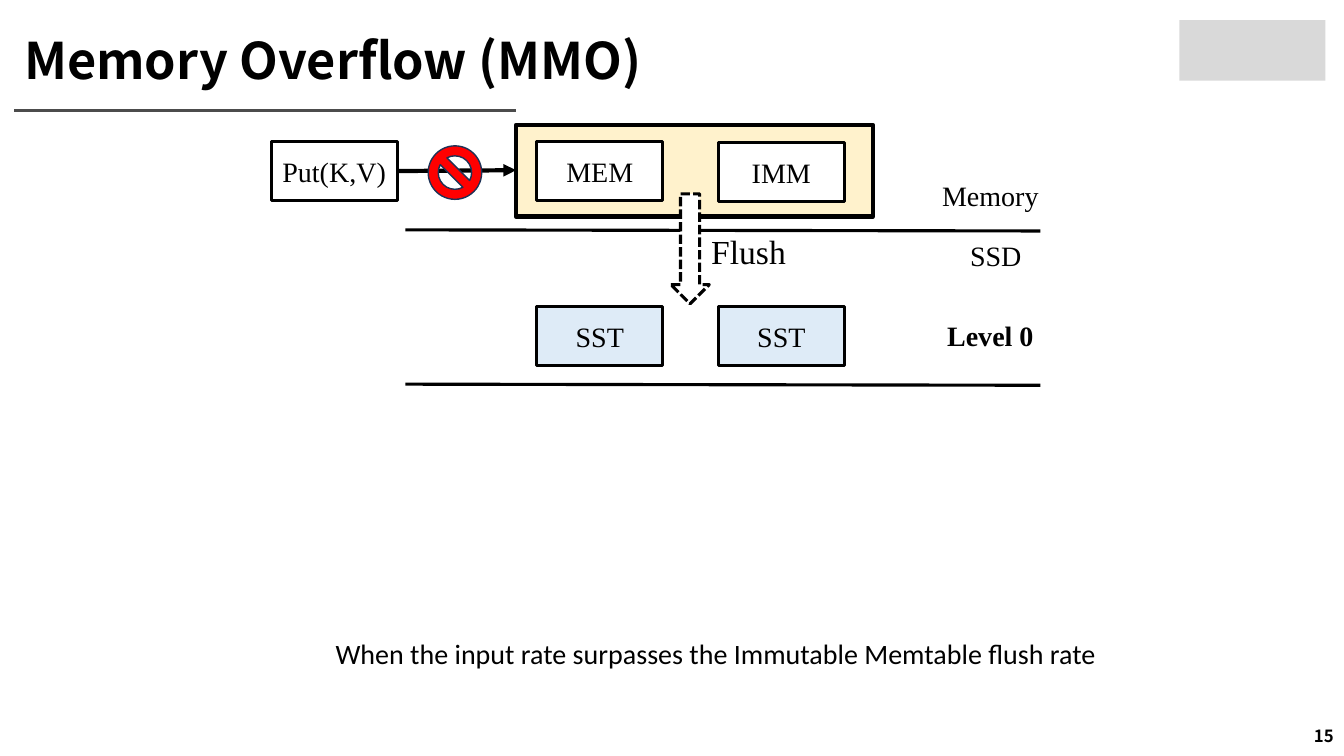
from dataclasses import dataclass

from pptx import Presentation
from pptx.dml.color import RGBColor
from pptx.enum import dml, shapes, text
from pptx.oxml import ns, xmlchemy
from pptx.util import Pt


@dataclass(frozen=True)
class Theme:
    ink: str = "000000"
    paper: str = "FFFFFF"
    rule: str = "4C4C4C"
    memory: str = "FFF2CC"
    sst: str = "DEEBF7"
    stop: str = "FF0000"
    stop_edge: str = "1E3256"
    badge: str = "D9D9D9"
    heading: str = "Noto Sans CJK KR"
    diagram: str = "Times New Roman"
    body: str = "Calibri"
    title_size: float = 36
    flush_size: float = 24
    label_size: float = 20
    number_size: float = 12


T = Theme()
SHAPE = shapes.MSO_SHAPE
LEFT, CENTER, RIGHT = text.PP_ALIGN.LEFT, text.PP_ALIGN.CENTER, text.PP_ALIGN.RIGHT
TOP, MIDDLE = text.MSO_ANCHOR.TOP, text.MSO_ANCHOR.MIDDLE
BOX_W, BOX_H = 90, 42.5
COLUMNS = (189.7, 319.4)


def write(tf, words, size, font, align, anchor, bold=False):
    tf.word_wrap = True
    tf.vertical_anchor = anchor
    p = tf.paragraphs[0]
    p.alignment = align
    r = p.add_run()
    r.text = words
    r.font.size = Pt(size)
    r.font.name = font
    r.font.bold = bold
    r.font.color.rgb = RGBColor.from_string(T.ink)
    rpr = r.font._element
    ea = xmlchemy.OxmlElement("a:ea")
    ea.set("typeface", font)
    rpr.find(ns.qn("a:latin")).addnext(ea)
    return p


def add_label(s, x, y, w, h, words, size=T.label_size, font=T.diagram,
              align=CENTER, anchor=TOP, bold=False):
    sp = s.shapes.add_textbox(Pt(x), Pt(y), Pt(w), Pt(h))
    return write(sp.text_frame, words, size, font, align, anchor, bold)


def add_block(s, kind, x, y, w, h, fill, edge=None, weight=2.25):
    sp = s.shapes.add_shape(kind, Pt(x), Pt(y), Pt(w), Pt(h))
    sp.shadow.inherit = False
    sp.fill.solid()
    sp.fill.fore_color.rgb = RGBColor.from_string(fill)
    if edge:
        sp.line.color.rgb = RGBColor.from_string(edge)
        sp.line.width = Pt(weight)
    else:
        sp.line.fill.background()
    return sp


def add_node(s, x, y, words, fill):
    sp = add_block(s, SHAPE.RECTANGLE, x, y, BOX_W, BOX_H, fill, T.ink)
    write(sp.text_frame, words, T.label_size, T.diagram, CENTER, MIDDLE)


def add_line(s, x1, y1, x2, y2, color=T.ink, weight=2.25, arrow=False):
    c = s.shapes.add_connector(shapes.MSO_CONNECTOR.STRAIGHT,
                               Pt(x1), Pt(y1), Pt(x2), Pt(y2))
    c.line.color.rgb = RGBColor.from_string(color)
    c.line.width = Pt(weight)
    if arrow:
        tail = xmlchemy.OxmlElement("a:tailEnd")
        tail.set("type", "triangle")
        c.line._get_or_add_ln().append(tail)
    c._element.spPr.append(xmlchemy.OxmlElement("a:effectLst"))


def header(s, x, y, w):
    add_block(s, SHAPE.RECTANGLE, x + w - 104.4, y, 104.4, 43.2, T.badge)
    add_line(s, x, y + 64.8, x + 358.5, y + 64.8, T.rule)
    p = add_label(s, x, y + 2.5, 818, 56, "Memory Overflow (MMO)", T.title_size,
                  T.heading, LEFT, MIDDLE, True)
    p.line_spacing = 0.9


def memory_tier(s, x, y):
    add_block(s, SHAPE.RECTANGLE, x + 174.9, y, 254.9, 65.5, T.memory, T.ink, 3)
    add_node(s, x, y + 11.6, "Put(K,V)", T.paper)
    add_node(s, x + COLUMNS[0], y + 11.6, "MEM", T.paper)
    add_node(s, x + COLUMNS[1], y + 12.3, "IMM", T.paper)
    add_line(s, x + BOX_W, y + 33, x + 174.9, y + 32.4, weight=3, arrow=True)
    add_block(s, SHAPE.NO_SYMBOL, x + 112.2, y + 15, 38.2, 38.2,
              T.stop, T.stop_edge, 1)
    add_label(s, x + 468.7, y + 34.6, 90, 31.5, "Memory")


def ssd_tier(s, x, y):
    for column in COLUMNS:
        add_node(s, x + column, y + 54.7, "SST", T.sst)
    for offset in (0, 110.2):
        add_line(s, x + 95.8, y + offset, x + 549.4, y + offset + 0.8)
    add_label(s, x + 487.7, y + 2.5, 59.8, 31.5, "SSD")
    add_label(s, x + 472.3, y + 59.8, 82.8, 31.5, "Level 0", bold=True)


def flush(s, x, y):
    sp = add_block(s, SHAPE.DOWN_ARROW, x, y, 27.4, 78.5, T.paper, T.ink)
    sp.line.dash_style = dml.MSO_LINE.SQUARE_DOT
    add_label(s, x + 18.4, y + 23, 74.2, 36, "Flush", T.flush_size)


def footer(s, x, y, w):
    add_label(s, x, y, 567.4, 31.5, "When the input rate surpasses the Immutable "
              "Memtable flush rate", font=T.body, align=LEFT)
    add_label(s, x + w - 216, y + 60, 216, 28.8, "15", T.number_size,
              T.heading, RIGHT, MIDDLE, True)


def main():
    prs = Presentation()
    prs.slide_width, prs.slide_height = Pt(960), Pt(540)
    s = prs.slides.add_slide(prs.slide_layouts[6])
    header(s, 10.1, 14.4, 936.7)
    memory_tier(s, 193.7, 89.2)
    ssd_tier(s, 193.7, 164.2)
    flush(s, 479.2, 138.5)
    footer(s, 232.6, 451.1, 727.2)
    prs.save("out.pptx")


if __name__ == "__main__":
    main()
